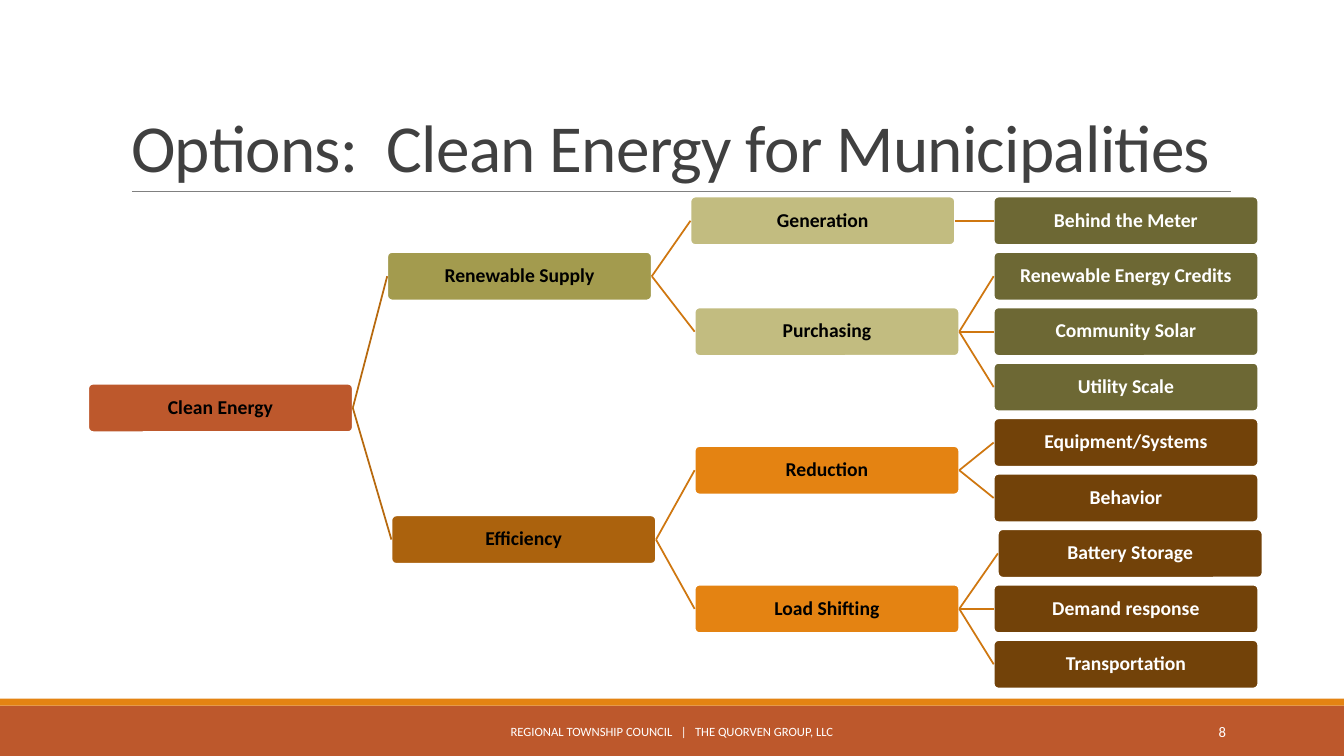
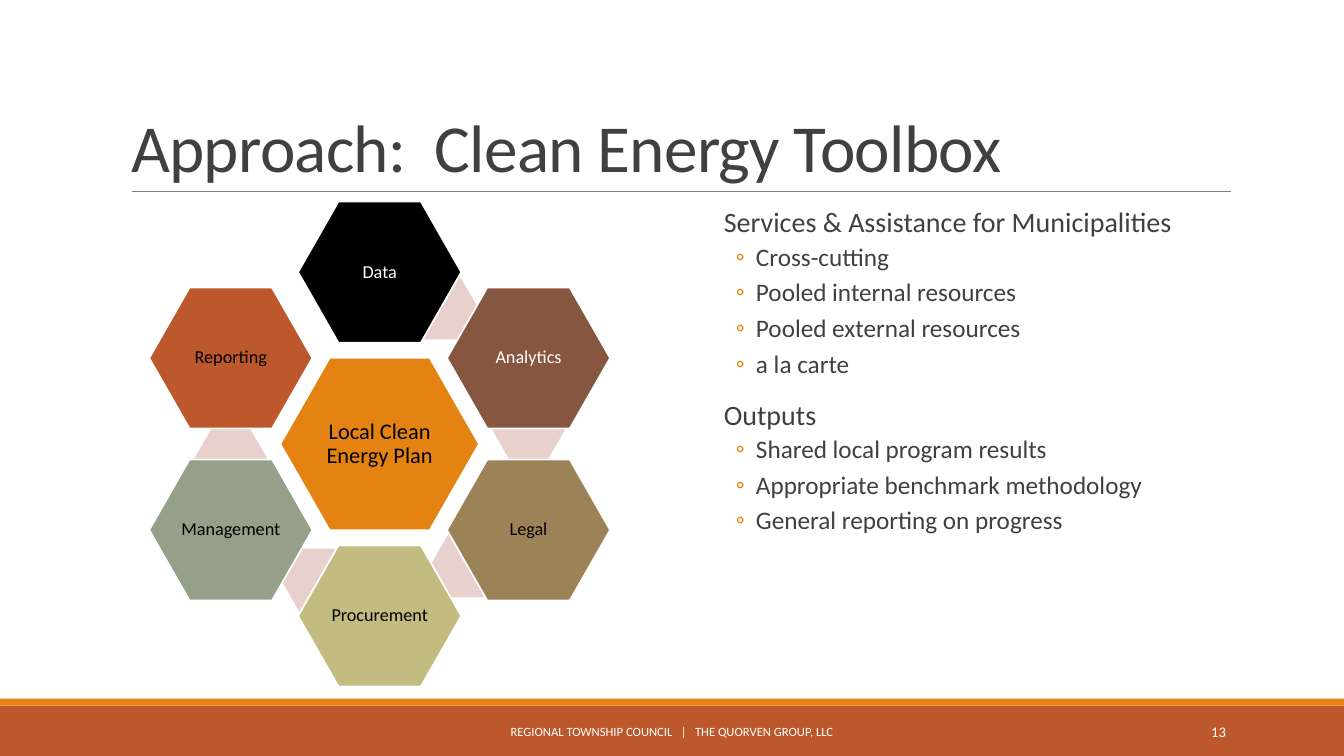
from math import cos, radians, sin

from lxml import etree
from pptx import Presentation
from pptx.dml.color import RGBColor
from pptx.enum import shapes, text
from pptx.oxml import ns
from pptx.util import Pt

WHITE = RGBColor(0xFF, 0xFF, 0xFF)
BLACK = RGBColor(0x00, 0x00, 0x00)
INK = RGBColor(0x40, 0x40, 0x40)
GRAY = RGBColor(0x80, 0x80, 0x80)
RUST = RGBColor(0xBD, 0x58, 0x2C)
ORANGE = RGBColor(0xE4, 0x83, 0x12)
AMBER = RGBColor(0xAB, 0x62, 0x0D)
BROWN = RGBColor(0x72, 0x42, 0x09)
OLIVE = RGBColor(0xA3, 0x9B, 0x4E)
SAND = RGBColor(0xC2, 0xBC, 0x80)
MOSS = RGBColor(0x6D, 0x68, 0x34)
COCOA = RGBColor(0x86, 0x56, 0x40)
KHAKI = RGBColor(0x9B, 0x83, 0x57)
SAGE = RGBColor(0x94, 0xA0, 0x88)
PINK = RGBColor(0xE8, 0xD1, 0xCD)
TRUNK = RGBColor(0xB7, 0x69, 0x0E)
BRANCH = RGBColor(0xCF, 0x77, 0x10)

KIND = shapes.MSO_SHAPE
STRAIGHT = shapes.MSO_CONNECTOR.STRAIGHT
ALIGN = text.PP_ALIGN
BASE = {"word_wrap": True, "auto_size": text.MSO_AUTO_SIZE.NONE}
MIDDLE = BASE | {"vertical_anchor": text.MSO_ANCHOR.MIDDLE}
TIGHT = MIDDLE | {"margin_" + side: Pt(1) for side in ("left", "top", "right", "bottom")}
HEAD = BASE | {"vertical_anchor": text.MSO_ANCHOR.BOTTOM}
LIST = BASE | {"vertical_anchor": text.MSO_ANCHOR.TOP, "margin_left": 0, "margin_right": 0}
LABEL = {"alignment": ALIGN.CENTER, "line_spacing": 0.9}


def draw(slide, kind, area, fill, edge=None):
    shape = slide.shapes.add_shape(kind, *map(Pt, area))
    shape.shadow.inherit = False
    shape.fill.solid()
    shape.fill.fore_color.rgb = fill
    if edge:
        shape.line.color.rgb = edge
        shape.line.width = Pt(1.25)
    else:
        shape.line.fill.background()
    return shape


def write(frame, bits, size, tint, form, para, bold=False):
    for key, value in form.items():
        setattr(frame, key, value)
    line = frame.paragraphs[-1]
    if line.runs:
        line = frame.add_paragraph()
    for key, value in para.items():
        setattr(line, key, value)
    for bit in bits:
        run = line.add_run()
        run.text = bit
        for key, value in {"name": "Calibri", "size": Pt(size), "bold": bold}.items():
            setattr(run.font, key, value)
        run.font.color.rgb = tint
    return line


deck = Presentation()
deck.slide_width, deck.slide_height = Pt(960), Pt(540)
FOOT = ("REGIONAL TOWNSHIP COUNCIL", " ", "|", " ", "THE QUORVEN GROUP, LLC")
pages = []
for layout, title, number in (
    (5, "Options:  Clean Energy for Municipalities", "8"),
    (1, "Approach:  Clean Energy Toolbox", "13"),
):
    page = deck.slides.add_slide(deck.slide_layouts[layout])
    pages.append(page)
    draw(page, KIND.RECTANGLE, (0, 504, 960, 36), RUST)
    draw(page, KIND.RECTANGLE, (0, 499, 960, 5), ORANGE)
    rule = page.shapes.add_connector(STRAIGHT, Pt(94.3), Pt(136.8), Pt(879.1), Pt(136.8))
    rule.line.color.rgb = GRAY
    rule.line.width = Pt(0.5)
    etree.SubElement(rule.element.spPr, ns.qn("a:effectLst"))

    head = page.shapes.title
    head.left, head.top, head.width, head.height = map(Pt, (86.4, 22.3, 792, 114.5))
    line = write(head.text_frame, [title], 48, INK, HEAD,
                 {"alignment": ALIGN.LEFT, "line_spacing": 0.85})
    line.runs[0].font.element.set("spc", "-50") if hasattr(line.runs[0].font, "element") else line.runs[0]._r.get_or_add_rPr().set("spc", "-50")

    for bits, size, left, width, align in (
        (FOOT, 9, 290.2, 379.4, ALIGN.CENTER),
        ([number], 10.5, 779.8, 103, ALIGN.RIGHT),
    ):
        box = page.shapes.add_textbox(Pt(left), Pt(508.3), Pt(width), Pt(28.8))
        line = write(box.text_frame, bits, size, WHITE, MIDDLE, {"alignment": align})
        for run in line.runs:
            if run.text == " ":
                run._r.get_or_add_rPr().set("spc", "400")

tree, tools = pages

COLS = (63, 279.6, 496.2, 709.8)
NODES = (
    ("Clean Energy", None, 0, 3.375, RUST, 0),
    ("Renewable Supply", "Clean Energy", 1, 1, OLIVE, -3),
    ("Generation", "Renewable Supply", 2, 0, SAND, -3),
    ("Behind the Meter", "Generation", 3, 0, MOSS, 0),
    ("Purchasing", "Renewable Supply", 2, 2, SAND, 0),
    ("Renewable Energy Credits", "Purchasing", 3, 1, MOSS, 0),
    ("Community Solar", "Purchasing", 3, 2, MOSS, 0),
    ("Utility Scale", "Purchasing", 3, 3, MOSS, 0),
    ("Efficiency", "Clean Energy", 1, 5.75, AMBER, 0),
    ("Reduction", "Efficiency", 2, 4.5, ORANGE, 0),
    ("Equipment/Systems", "Reduction", 3, 4, BROWN, 0),
    ("Behavior", "Reduction", 3, 5, BROWN, 0),
    ("Load Shifting", "Efficiency", 2, 7, ORANGE, 0),
    ("Battery Storage", "Load Shifting", 3, 6, BROWN, 3),
    ("Demand response", "Load Shifting", 3, 7, BROWN, 0),
    ("Transportation", "Load Shifting", 3, 8, BROWN, 0),
)
made = {}
for name, parent, col, row, fill, nudge in NODES:
    area = (COLS[col] + nudge, 140.4 + 39.6 * row, 189, 34.6)
    node = made[name] = draw(tree, KIND.ROUNDED_RECTANGLE, area, fill, WHITE)
    node.adjustments[0] = 0.1
    tint = WHITE if col == 3 else BLACK
    write(node.text_frame, [name], 14, tint, TIGHT, LABEL, True)
    if parent:
        link = tree.shapes.add_connector(STRAIGHT, 0, 0, 0, 0)
        link.begin_connect(made[parent], 3)
        link.end_connect(node, 1)
        link.line.color.rgb = TRUNK if col == 1 else BRANCH
        link.line.width = Pt(1.25)
        etree.SubElement(link.element.spPr, ns.qn("a:effectLst"))

body = tools.placeholders[1]
body.left, body.top, body.width, body.height = map(Pt, (509.8, 145.4, 368.6, 316.8))
TOPICS = {
    "Services & Assistance for Municipalities": (
        "Cross-cutting", "Pooled internal resources", "Pooled external resources", "a la carte"),
    "Outputs": (
        "Shared local program results", "Appropriate benchmark methodology",
        "General reporting on progress"),
}
for topic, items in TOPICS.items():
    for level, entry in [(0, topic)] + [(1, item) for item in items]:
        para = {"level": level, "alignment": ALIGN.LEFT, "line_spacing": 0.9,
                "space_before": Pt((12, 2)[level]), "space_after": Pt((2, 4)[level])}
        line = write(body.text_frame, [entry], (20, 18)[level], INK, LIST, para)
        props = line._p.get_or_add_pPr()
        props.set("marL", str(Pt((7.2, 30.2)[level])))
        props.set("indent", str(Pt((0, -14.4)[level])))
        if level:
            hue = etree.SubElement(props, ns.qn("a:buClr"))
            etree.SubElement(hue, ns.qn("a:srgbClr"), val=str(ORANGE))
            etree.SubElement(props, ns.qn("a:buFont"), typeface="Calibri")
            etree.SubElement(props, ns.qn("a:buChar"), char="◦")
        else:
            etree.SubElement(props, ns.qn("a:buNone"))

MIDX, MIDY, RING, STEP = 271.2, 317.2, 122.8, 50.2
hub = draw(tools, KIND.HEXAGON, (MIDX - 71, MIDY - 61.6, 142, 123.2), ORANGE, WHITE)
hub.adjustments[0] = 0.286
write(hub.text_frame, ["Local Clean Energy Plan"], 16, BLACK, TIGHT, LABEL)

PARTS = (
    ("Data", BLACK, WHITE),
    ("Analytics", COCOA, WHITE),
    ("Legal", KHAKI, BLACK),
    ("Procurement", SAND, BLACK),
    ("Management", SAGE, BLACK),
    ("Reporting", RUST, BLACK),
)
for spot, (name, fill, tint) in enumerate(PARTS):
    turn = radians(60 * spot - 90)
    x, y = MIDX + RING * cos(turn), MIDY + RING * sin(turn)
    if spot < len(PARTS) - 1:
        turn = radians(60 * spot + 30)
        area = (x + STEP * cos(turn) - 26.6, y + STEP * sin(turn) - 23, 53.2, 46)
        link = draw(tools, KIND.HEXAGON, area, PINK)
        link.adjustments[0] = 0.289
    cell = draw(tools, KIND.HEXAGON, (x - 58.3, y - 50.4, 116.6, 100.8), fill, WHITE)
    cell.adjustments[0] = 0.286
    write(cell.text_frame, [name], 13, tint, TIGHT, LABEL)

deck.save("out.pptx")
